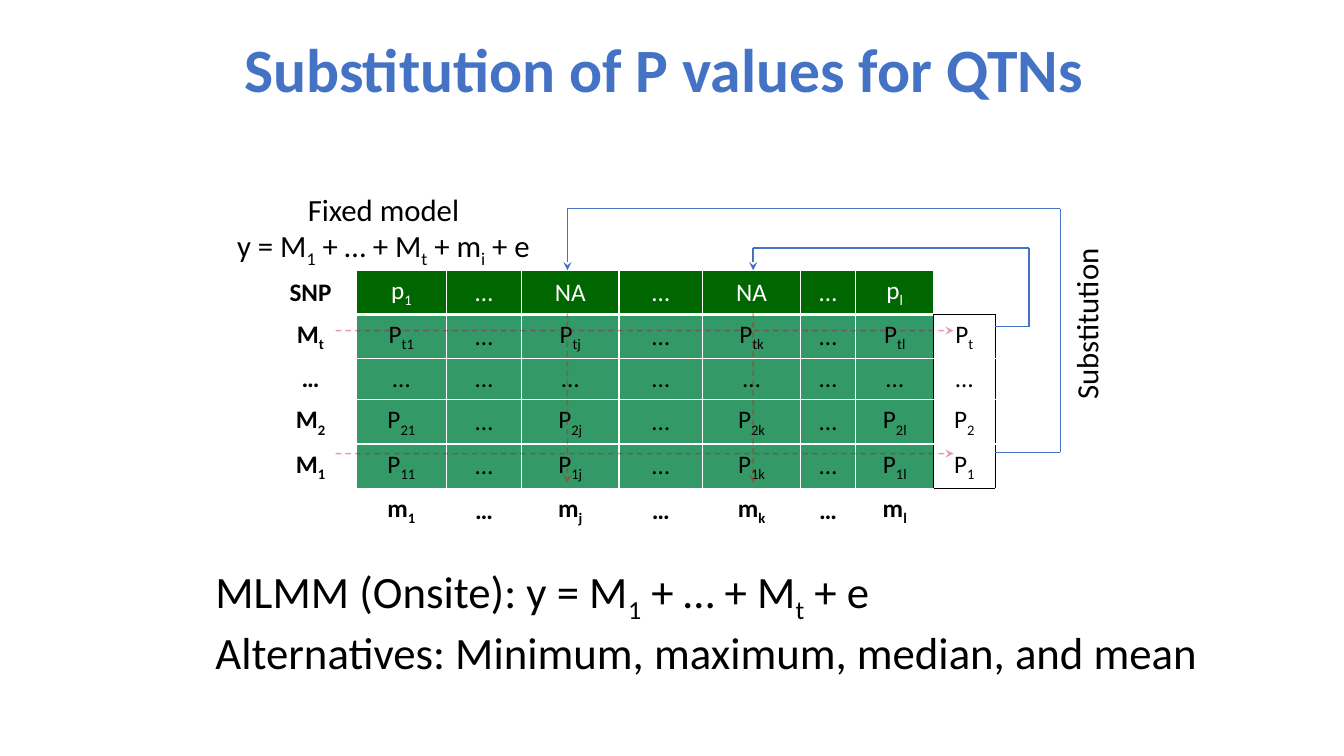
from itertools import pairwise

from lxml.etree import SubElement
from pptx import Presentation
from pptx.dml.color import RGBColor
from pptx.enum.dml import MSO_LINE
from pptx.enum.shapes import MSO_CONNECTOR
from pptx.enum.text import MSO_ANCHOR as Anchor, PP_ALIGN as Align
from pptx.oxml.ns import qn
from pptx.util import Cm, Pt

BLACK, WHITE, BLUE = "000000", "FFFFFF", "4472C4"
HEADER_GREEN, BODY_GREEN = "006600", "339966"
QTN_RED, MARKER_PINK = "FF0000", "BA0066"


def write_text(paragraph, text, size, color=BLACK, bold=False, align=Align.CENTER):
    """Fill a paragraph; every second piece between bars is a subscript."""
    paragraph.alignment = align
    font_format = {"name": "Calibri", "size": Pt(size), "bold": bold}
    for index, piece in enumerate(text.split("|")):
        if not piece:
            continue
        run = paragraph.add_run()
        run.text = piece
        for name, value in font_format.items():
            setattr(run.font, name, value)
        run.font.color.rgb = RGBColor.from_string(color)
        if index % 2:
            run._r.get_or_add_rPr().set("baseline", "-25000")


def draw_path(points, color, alpha=None):
    """Draw straight segments through the points, with an arrowhead at the last."""
    for start, end in pairwise(points):
        connector = slide.shapes.add_connector(
            MSO_CONNECTOR.STRAIGHT, *map(Cm, start + end))
        connector.line.width = Pt(1)
        connector.line.color.rgb = RGBColor.from_string(color)
        properties = connector._element.spPr
        if alpha:
            connector.line.dash_style = MSO_LINE.DASH
            color_element = next(properties.iter(qn("a:srgbClr")))
            SubElement(color_element, qn("a:alpha"), val=str(alpha * 1000))
        if end == points[-1]:
            line_element = properties.find(qn("a:ln"))
            SubElement(line_element, qn("a:tailEnd"), type="stealth")
        SubElement(properties, qn("a:effectLst"))


presentation = Presentation()
presentation.slide_width, presentation.slide_height = Cm(33.87), Cm(19.05)
slide = presentation.slides.add_slide(presentation.slide_layouts[6])

# Table of P values
rows = [
    ["SNP", "p|1", "…", "NA", "…", "NA", "…", "p|l", ""],
    ["M|t", "P|t1", "…", "P|tj", "…", "P|tk", "…", "P|tl", "P|t"],
    ["…"] * 9,
    ["M|2", "P|21", "…", "P|2j", "…", "P|2k", "…", "P|2l", "P|2"],
    ["M|1", "P|11", "…", "P|1j", "…", "P|1k", "…", "P|1l", "P|1"],
    ["", "m|1", "…", "m|j", "…", "m|k", "…", "m|l", ""],
]
column_widths = [2.29, 2.29, 1.88, 2.46, 2.11, 2.46, 1.4, 1.96, 1.55]
row_height = 1.03
last_row, last_column = len(rows) - 1, len(column_widths) - 1

table = slide.shapes.add_table(
    len(rows), len(column_widths), Cm(6.68), Cm(6.81),
    Cm(sum(column_widths)), Cm(row_height * len(rows))).table
table.first_row = table.horz_banding = False
for column, width in zip(table.columns, column_widths):
    column.width = Cm(width)

for row_index, texts in enumerate(rows):
    table.rows[row_index].height = Cm(row_height)
    for column_index, text in enumerate(texts):
        cell = table.cell(row_index, column_index)
        cell.vertical_anchor = Anchor.MIDDLE
        is_header = row_index == 0
        in_grid = 0 < column_index < last_column and row_index < last_row
        in_body = 0 < row_index < last_row
        in_result = column_index == last_column

        write_text(cell.text_frame.paragraphs[0], text, 18,
                   color=WHITE if is_header and in_grid else BLACK,
                   bold=column_index == 0 or row_index == last_row)
        if not text:
            cell.text_frame.paragraphs[0].font.size = Pt(18)

        # The result column is boxed in black, all other borders are white
        black_sides = {
            "L": in_result and in_body,
            "R": in_body and column_index >= last_column - 1,
            "T": in_result and row_index in (1, last_row),
            "B": in_result and row_index in (0, last_row - 1),
        }
        cell_properties = cell._tc.get_or_add_tcPr()
        for side, is_black in black_sides.items():
            heavy = is_header and side == "B" and not in_result
            border = SubElement(cell_properties, qn(f"a:ln{side}"),
                                w=str(Pt(3 if heavy else 1)))
            fill = SubElement(border, qn("a:solidFill"))
            SubElement(fill, qn("a:srgbClr"), val=BLACK if is_black else WHITE)

        if in_grid:
            cell.fill.solid()
            cell.fill.fore_color.rgb = RGBColor.from_string(
                HEADER_GREEN if is_header else BODY_GREEN)
        else:
            cell.fill.background()

# Substitution arrows from the result column to the two NA cells
table_right, header_top = 25.07, 6.81
column_j, column_k = 14.3, 18.98
for target, start_y, turn_x, top_y in [
    (column_k, 8.23, 25.93, 6.25),
    (column_j, 11.4, 26.72, 5.26),
]:
    draw_path([(table_right, start_y), (turn_x, start_y), (turn_x, top_y),
               (target, top_y), (target, header_top)], BLUE)

# Dashed arrows along the QTN columns and the marker rows
for x in (column_k, column_j):
    draw_path([(x, 7.87), (x, 12.17)], QTN_RED, alpha=40)
for y in (8.33, 11.43):
    draw_path([(8.46, y), (24.03, y)], MARKER_PINK, alpha=40)

# Text boxes: left, top, width, height, rotation, size, color, bold, align, lines
text_boxes = [
    (5.18, 4.67, 8.97, 2.13, 0, 22, BLACK, False, Align.CENTER,
     ["Fixed model", "y = M|1| + … + M|t| + m|i| + e"]),
    (24.1, 7.57, 6.55, 1.19, 270, 22, BLACK, False, Align.CENTER, ["Substitution"]),
    (2.31, 0, 29.21, 3.68, 0, 44, BLUE, True, Align.CENTER,
     ["Substitution of P values for QTNs "]),
    (5.18, 14.07, 24.23, 1.63, 0, 32, BLACK, False, Align.LEFT,
     ["MLMM (Onsite): y = M|1| + … + M|t| + e"]),
    (5.18, 15.62, 25.35, 1.63, 0, 32, BLACK, False, Align.LEFT,
     ["Alternatives: Minimum, maximum, median, and mean"]),
]
for left, top, width, height, rotation, size, color, bold, align, lines in text_boxes:
    box = slide.shapes.add_textbox(Cm(left), Cm(top), Cm(width), Cm(height))
    box.rotation = rotation
    frame = box.text_frame
    frame.word_wrap = True
    frame.vertical_anchor = Anchor.MIDDLE if bold else Anchor.TOP
    for index, line in enumerate(lines):
        paragraph = frame.add_paragraph() if index else frame.paragraphs[0]
        write_text(paragraph, line, size, color, bold, align)
        if bold:
            paragraph.line_spacing = 0.9

presentation.save("out.pptx")
